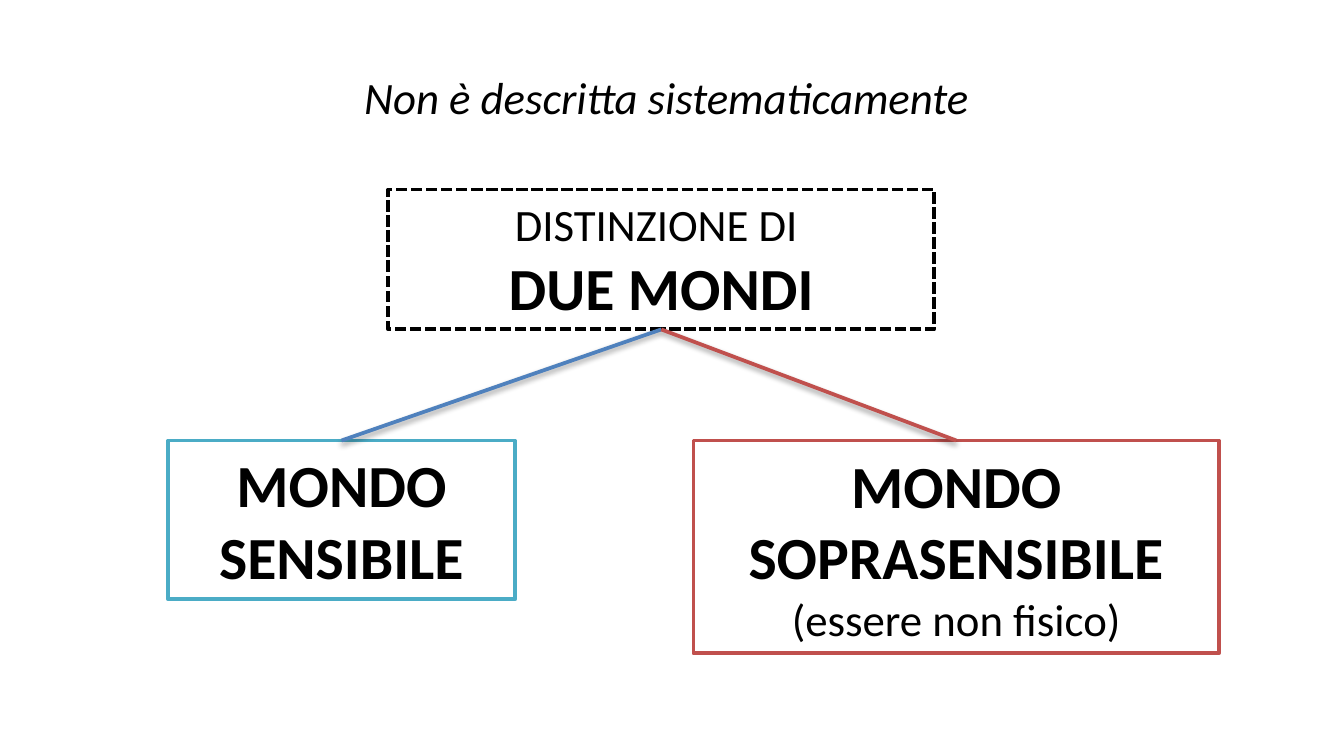
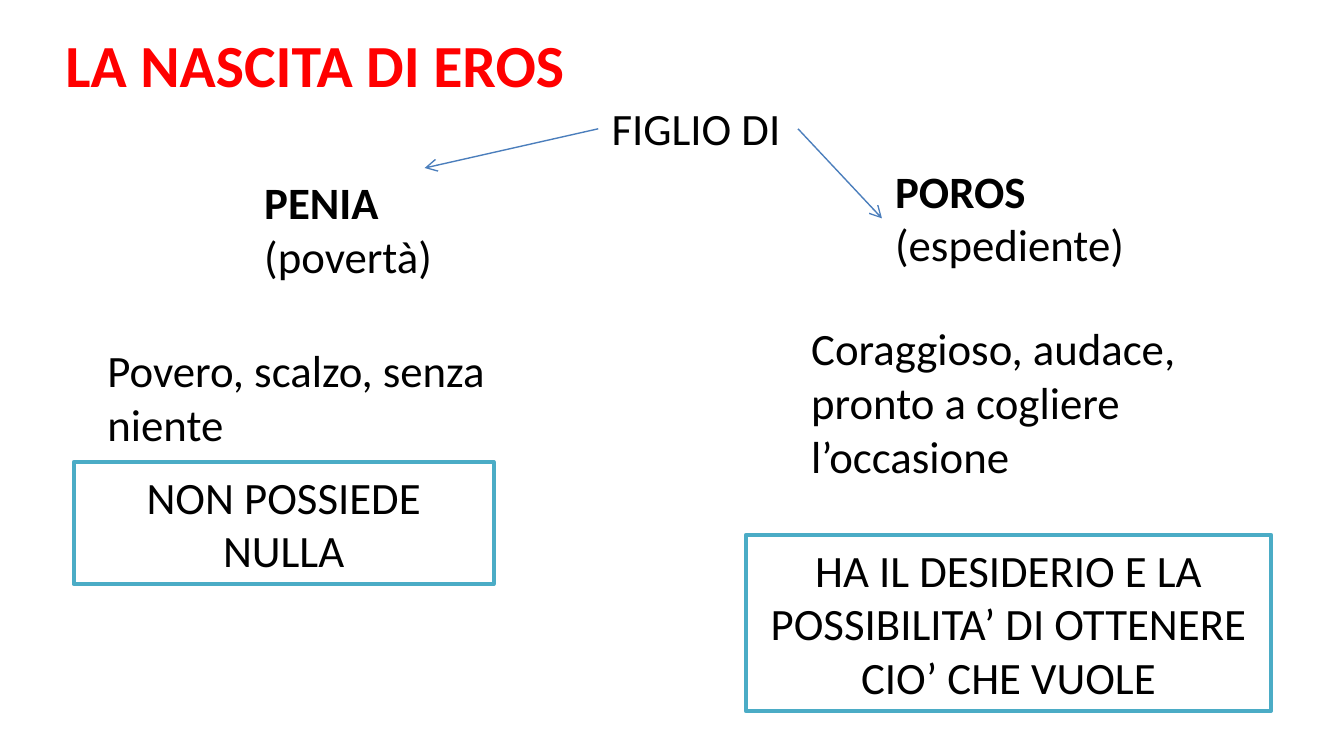
from lxml import etree
from pptx import Presentation
from pptx.dml.color import RGBColor
from pptx.enum import dml, shapes, text
from pptx.oxml import ns
from pptx.util import Pt

# Shared look
FONT = "Calibri"
BODY, LARGE = 24, 32
BLACK, WHITE, RED = "000000", "FFFFFF", "FF0000"
TEAL, BRICK, BLUE, ARROW_BLUE = "4BACC6", "C0504D", "4F81BD", "4B7EBC"
BOTTOM_SITE, TOP_SITE = 2, 0


def color(hex_string):
    return RGBColor.from_string(hex_string)


def run(content, size=BODY, bold=False, italic=False, ink=BLACK):
    return content, size, bold, italic, ink


def write(shape, paragraphs, alignment):
    """Fill a shape with paragraphs, each a list of runs."""
    frame = shape.text_frame
    frame.word_wrap = True
    frame.auto_size = text.MSO_AUTO_SIZE.SHAPE_TO_FIT_TEXT
    for index, runs in enumerate(paragraphs):
        paragraph = frame.paragraphs[0] if index == 0 else frame.add_paragraph()
        paragraph.alignment = alignment
        for content, size, bold, italic, ink in runs:
            piece = paragraph.add_run()
            piece.text = content
            font = piece.font
            font.name, font.size = FONT, Pt(size)
            font.bold, font.italic = bold, italic
            font.color.rgb = color(ink)


def add_label(slide, area, *paragraphs, alignment=text.PP_ALIGN.LEFT):
    shape = slide.shapes.add_textbox(*map(Pt, area))
    write(shape, paragraphs, alignment)


def add_box(slide, area, outline, *paragraphs, dash=None):
    shape = slide.shapes.add_shape(shapes.MSO_SHAPE.RECTANGLE, *map(Pt, area))
    shape.shadow.inherit = False
    shape.fill.solid()
    shape.fill.fore_color.rgb = color(WHITE)
    shape.line.color.rgb = color(outline)
    shape.line.width = Pt(2)
    if dash:
        shape.line.dash_style = dash
    write(shape, paragraphs, text.PP_ALIGN.CENTER)
    return shape


def add_line(slide, start, end, ink, width):
    """Draw a straight line and return it with its empty effect list."""
    line = slide.shapes.add_connector(
        shapes.MSO_CONNECTOR.STRAIGHT, *map(Pt, start + end))
    line.line.color.rgb = color(ink)
    line.line.width = Pt(width)
    effects = etree.SubElement(line._element.spPr, ns.qn("a:effectLst"))
    return line, effects


def add_branch(slide, parent, child, ink):
    """Join the bottom of one box to the top of another, with a soft shadow."""
    line, effects = add_line(slide, (0, 0), (0, 0), ink, 2)
    line.begin_connect(parent, BOTTOM_SITE)
    line.end_connect(child, TOP_SITE)
    shadow = etree.SubElement(
        effects, ns.qn("a:outerShdw"), blurRad=str(Pt(3.1)),
        dist=str(Pt(1.6)), dir="5400000", rotWithShape="0")
    shade = etree.SubElement(shadow, ns.qn("a:srgbClr"), val=BLACK)
    etree.SubElement(shade, ns.qn("a:alpha"), val="38000")


def add_arrow(slide, start, end):
    line, _ = add_line(slide, start, end, ARROW_BLUE, 0.75)
    etree.SubElement(line.line._get_or_add_ln(), ns.qn("a:tailEnd"), type="arrow")


def build_two_worlds(slide):
    add_label(slide, (84, 34, 546, 36),
              [run("Non è descritta sistematicamente", italic=True)],
              alignment=text.PP_ALIGN.CENTER)
    distinction = add_box(
        slide, (208, 101.5, 292.5, 75), BLACK,
        [run("DISTINZIONE DI ")], [run("DUE MONDI", LARGE, bold=True)],
        dash=dml.MSO_LINE.SQUARE_DOT)
    sensible = add_box(slide, (90, 236, 186, 85), TEAL,
                       [run("MONDO SENSIBILE", LARGE, bold=True)])
    supersensible = add_box(
        slide, (371.5, 236, 281.5, 114), BRICK,
        [run("MONDO SOPRASENSIBILE ", LARGE, bold=True),
         run("(essere non fisico)")])
    add_branch(slide, distinction, sensible, BLUE)
    add_branch(slide, distinction, supersensible, BRICK)


def build_birth_of_eros(slide):
    add_label(slide, (28, 11.5, 585, 46),
              [run("LA NASCITA DI EROS", LARGE, bold=True, ink=RED)])
    add_label(slide, (320.5, 50.5, 106.5, 36), [run("FIGLIO DI")])

    # Parents: name, meaning and character
    parents = [
        ("PENIA", "(povertà)", (134.5, 90, 186, 65.5),
         "Povero, scalzo, senza niente", (50.5, 180, 225, 65.5)),
        ("POROS", "(espediente)", (472.5, 84, 186, 65.5),
         "Coraggioso, audace, pronto a cogliere l’occasione",
         (427.5, 168.5, 225, 94.5)),
    ]
    for name, meaning, name_area, character, character_area in parents:
        add_label(slide, name_area, [run(name, bold=True)], [run(meaning)])
        add_label(slide, character_area, [run(character)])

    # Consequences
    add_box(slide, (39.5, 247.5, 225, 65.5), TEAL, [run("NON POSSIEDE NULLA")])
    add_box(slide, (399.5, 286.5, 281.5, 94.5), TEAL,
            [run("HA IL DESIDERIO E LA POSSIBILITA’ DI OTTENERE CIO’ CHE VUOLE")])

    add_arrow(slide, (320.5, 69), (227.5, 90))
    add_arrow(slide, (427.5, 69), (472.5, 117))


def main():
    presentation = Presentation()
    presentation.slide_width, presentation.slide_height = Pt(720), Pt(405)
    blank = presentation.slide_layouts[6]
    for build in (build_two_worlds, build_birth_of_eros):
        build(presentation.slides.add_slide(blank))
    presentation.save("out.pptx")


if __name__ == "__main__":
    main()
